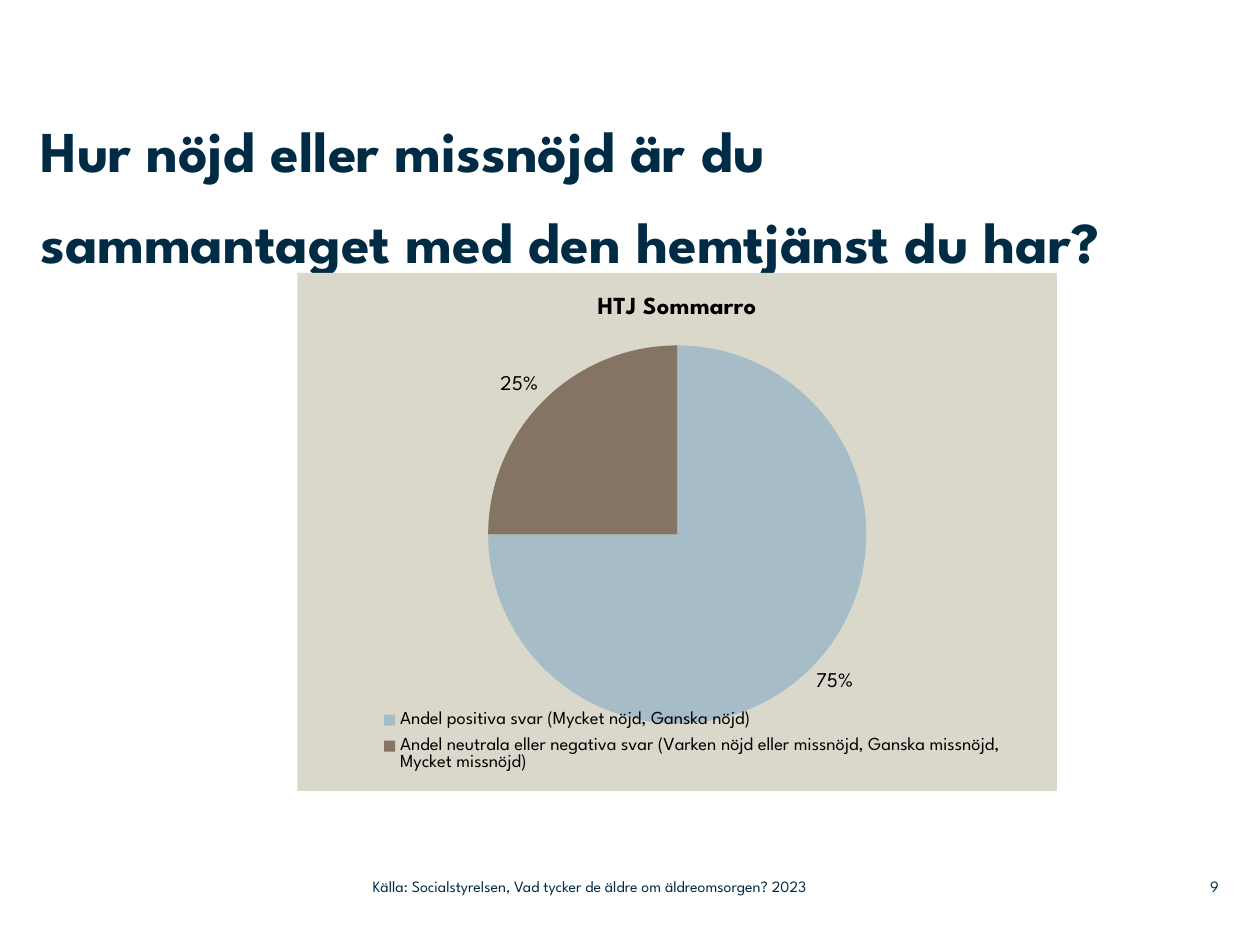
from pptx import Presentation
from pptx.chart.data import CategoryChartData as Data
from pptx.dml.color import RGBColor
from pptx.enum.chart import XL_CHART_TYPE as Kind, XL_LABEL_POSITION as Spot
from pptx.enum.chart import XL_LEGEND_POSITION as Side
from pptx.enum.text import MSO_ANCHOR as Anchor, PP_ALIGN as Align
from pptx.oxml import parse_xml
from pptx.oxml.ns import nsdecls
from pptx.util import Pt

FACE = "League Spartan"
NAVY, BLACK = "002B45", "000000"


def style(font, size, tone, bold=False):
    for key, val in {"name": FACE, "size": Pt(size), "bold": bold}.items():
        setattr(font, key, val)
    font.color.rgb = RGBColor.from_string(tone)


def layout(inner, x, y, w, h):
    """Return a manual chart layout, in fractions of the chart area."""
    target = '<c:layoutTarget val="inner"/>' if inner else ""
    modes = '<c:xMode val="edge"/><c:yMode val="edge"/>'
    sizes = "".join(f'<c:{tag} val="{val}"/>'
                    for tag, val in zip("xywh", (x, y, w, h)))
    return parse_xml(f'<c:layout {nsdecls("c")}><c:manualLayout>'
                     f'{target}{modes}{sizes}</c:manualLayout></c:layout>')


deck = Presentation()
deck.slide_width, deck.slide_height = Pt(720), Pt(540)
slide = deck.slides.add_slide(deck.slide_layouts[6])

# Title, source and page number
title = "Hur nöjd eller missnöjd är du\vsammantaget med den hemtjänst du har?"
source = "Källa: Socialstyrelsen, Vad tycker de äldre om äldreomsorgen? 2023"
texts = [
    (title, (23, 54, 685, 102), 33, True, Align.LEFT, Anchor.TOP, 1.3),
    (source, (213, 496, 319, 21), 9, False, Align.LEFT, Anchor.MIDDLE, 1),
    ("9", (662.4, 496, 34, 21), 9, False, Align.RIGHT, Anchor.MIDDLE, 1),
]
for text, place, size, bold, align, anchor, space in texts:
    frame = slide.shapes.add_textbox(*map(Pt, place)).text_frame
    form = {"word_wrap": True, "vertical_anchor": anchor, "margin_left": 0,
            "margin_right": 0, "margin_top": 0, "margin_bottom": 0}
    for key, val in form.items():
        setattr(frame, key, val)
    para = frame.paragraphs[0]
    para.text, para.alignment, para.line_spacing = text, align, space
    for run in para.runs:
        style(run.font, size, NAVY, bold)

# Pie chart
name = "HTJ Sommarro"
data = Data()
data.categories = [
    "Andel positiva svar (Mycket nöjd, Ganska nöjd)",
    "Andel neutrala eller negativa svar (Varken nöjd eller missnöjd, "
    "Ganska missnöjd, Mycket missnöjd)",
]
data.add_series(name, (75, 25))
place = map(Pt, (170, 156, 434, 296))
chart = slide.shapes.add_chart(Kind.PIE, *place, data).chart
style(chart.font, 18, BLACK)

chart.has_title = True
head = chart.chart_title.text_frame
head.text = name
style(head.paragraphs[0].runs[0].font, 14, BLACK, True)
chart.chart_title.include_in_layout = False

plot = chart.plots[0]
plot.vary_by_categories = True
for idx, tone in enumerate(("A6BCC6", "857363")):
    point = plot.series[0].points[idx].format
    point.fill.solid()
    point.fill.fore_color.rgb = RGBColor.from_string(tone)
    point.line.fill.background()

plot.has_data_labels = True
labels = plot.data_labels
form = {"show_percentage": True, "show_value": False, "number_format": "0%",
        "number_format_is_linked": False, "position": Spot.OUTSIDE_END}
for key, val in form.items():
    setattr(labels, key, val)
style(labels.font, 12, BLACK)

chart.has_legend = True
legend = chart.legend
legend.position, legend.include_in_layout = Side.BOTTOM, False
style(legend.font, 10.5, BLACK)

# Manual places let the legend overlap the pie
root = chart.element
area = root.find(".//{*}plotArea")
for old in area.findall("{*}layout"):
    area.remove(old)
area.insert(0, layout(True, 0.25, 0.14, 0.5, 0.73))
key = root.find(".//{*}legend")
for old in key.findall("{*}layout"):
    key.remove(old)
key.find("{*}legendPos").addnext(layout(False, 0.1, 0.83, 0.84, 0.15))

# Chart background
back = parse_xml(f'<c:spPr {nsdecls("c", "a")}><a:solidFill>'
                 '<a:srgbClr val="DAD7CB"/></a:solidFill>'
                 '<a:ln><a:noFill/></a:ln></c:spPr>')
root.find("{*}chart").addnext(back)

deck.save("out.pptx")
